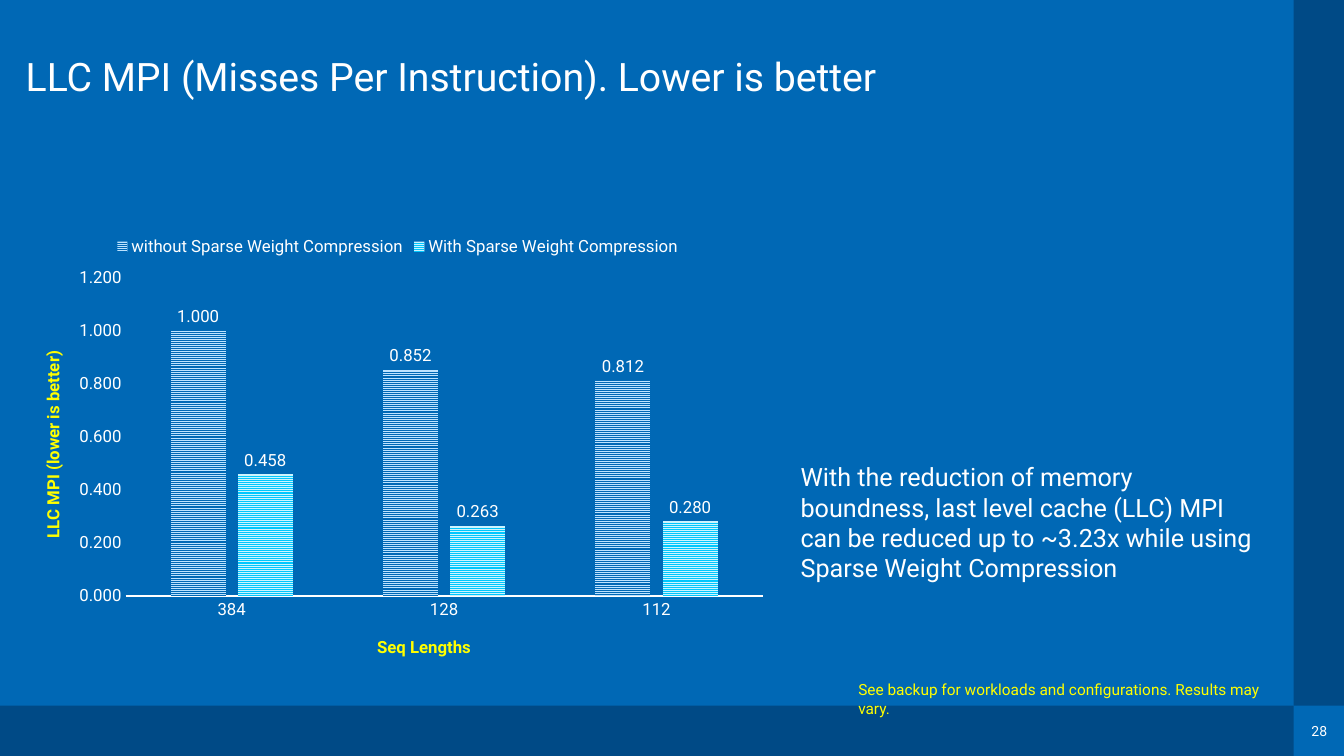
from dataclasses import dataclass

from lxml import etree
from pptx import Presentation
from pptx.chart.data import CategoryChartData
from pptx.dml.color import RGBColor
from pptx.enum.chart import XL_CHART_TYPE, XL_LABEL_POSITION, XL_LEGEND_POSITION, XL_TICK_MARK
from pptx.enum.dml import MSO_PATTERN
from pptx.enum.shapes import MSO_SHAPE
from pptx.enum.text import MSO_ANCHOR, PP_ALIGN
from pptx.oxml.ns import qn
from pptx.util import Pt

COLUMNS = XL_CHART_TYPE.COLUMN_CLUSTERED
OUTSIDE = XL_LABEL_POSITION.OUTSIDE_END
LEGEND_TOP = XL_LEGEND_POSITION.TOP
NO_TICK = XL_TICK_MARK.NONE
STRIPES = MSO_PATTERN.NARROW_HORIZONTAL
RECTANGLE = MSO_SHAPE.RECTANGLE
TOP, MIDDLE = MSO_ANCHOR.TOP, MSO_ANCHOR.MIDDLE
LEFT, CENTER = PP_ALIGN.LEFT, PP_ALIGN.CENTER

EMU_PER_PX = 9525
SLIDE_WIDTH, SLIDE_HEIGHT, BAND = 1280, 720, 48


@dataclass(frozen=True)
class Theme:
    font: str = "Roboto"
    background: str = "0068B5"
    band: str = "004A86"
    text: str = "FFFFFF"
    accent: str = "FFFF00"
    # Foreground and background of each series' stripes
    stripes: tuple = (("0068B5", "BDE3FF"), ("00C7FD", "CCF4FF"))
    title_size: int = 28
    body_size: int = 18
    chart_size: int = 12
    note_size: int = 11
    number_size: int = 10


THEME = Theme()


def px(*lengths):
    return [length * EMU_PER_PX for length in lengths]


def rgb(color):
    return RGBColor.from_string(color)


def style_font(font, size, color=THEME.text, bold=False):
    font.name = THEME.font
    font.size = Pt(size)
    font.bold = bold
    font.color.rgb = rgb(color)


def add_band(slide, *box):
    shape = slide.shapes.add_shape(RECTANGLE, *px(*box))
    shape.shadow.inherit = False
    shape.fill.solid()
    shape.fill.fore_color.rgb = rgb(THEME.band)
    shape.line.fill.background()


def add_text(slide, box, text, size, color=THEME.text, anchor=TOP,
             align=LEFT, spacing=1.0, inset=True, wrap=True):
    text_frame = slide.shapes.add_textbox(*px(*box)).text_frame
    text_frame.word_wrap = wrap
    text_frame.vertical_anchor = anchor
    if not inset:
        text_frame.margin_left = text_frame.margin_right = 0
        text_frame.margin_top = text_frame.margin_bottom = 0
    text_frame.text = text
    paragraph = text_frame.paragraphs[0]
    paragraph.alignment = align
    paragraph.line_spacing = spacing
    style_font(paragraph.runs[0].font, size, color)


def place(element, before, **position):
    """Place a chart part by fractions of the chart, ahead of the named child."""
    for old in element.findall(qn("c:layout")):
        element.remove(old)
    layout = etree.Element(qn("c:layout"))
    manual = etree.SubElement(layout, qn("c:manualLayout"))
    if "h" in position:
        etree.SubElement(manual, qn("c:layoutTarget")).set("val", "inner")
    for axis in ("xMode", "yMode"):
        etree.SubElement(manual, qn("c:" + axis)).set("val", "edge")
    for key, value in position.items():
        etree.SubElement(manual, qn("c:" + key)).set("val", str(value))
    element.find(qn("c:" + before)).addprevious(layout)


def style_axis(axis, title, x, y):
    axis.has_major_gridlines = False
    axis.major_tick_mark = axis.minor_tick_mark = NO_TICK
    style_font(axis.tick_labels.font, THEME.chart_size)
    text_frame = axis.axis_title.text_frame
    text_frame.text = title
    style_font(text_frame.paragraphs[0].runs[0].font, THEME.chart_size, THEME.accent, True)
    place(axis.axis_title._element, "overlay", x=x, y=y)


def style_series(series, foreground, background):
    fill = series.format.fill
    fill.patterned()
    fill.pattern = STRIPES
    fill.fore_color.rgb = rgb(foreground)
    fill.back_color.rgb = rgb(background)
    series.invert_if_negative = False
    labels = series.data_labels
    labels.show_value = True
    labels.position = OUTSIDE
    labels.number_format = "0.000"
    labels.number_format_is_linked = False
    style_font(labels.font, THEME.chart_size)


def add_misses_chart(slide, box):
    data = CategoryChartData(number_format="0.000")
    data.categories = ["384", "128", "112"]
    data.add_series("without Sparse Weight Compression", (1, 0.852, 0.812))
    data.add_series("With Sparse Weight Compression", (0.458, 0.263, 0.280))
    chart = slide.shapes.add_chart(COLUMNS, *px(*box), data).chart
    chart.has_title = False
    style_font(chart.font, THEME.number_size)

    # Columns
    plot = chart.plots[0]
    plot.gap_width, plot.overlap = 164, -22
    plot.vary_by_categories = False
    for series, colors in zip(plot.series, THEME.stripes):
        style_series(series, *colors)
    place(plot._element.getparent(), "barChart", x=0.144, y=0.12, w=0.836, h=0.704)

    # Axes
    style_axis(chart.category_axis, "Seq Lengths", 0.47, 0.905)
    line = chart.category_axis.format.line
    line.color.rgb = rgb(THEME.text)
    line.width = Pt(1.5)
    value_axis = chart.value_axis
    style_axis(value_axis, "LLC MPI (lower is better)", 0.03, 0.275)
    value_axis.minimum_scale, value_axis.maximum_scale = 0, 1.2
    value_axis.major_unit = 0.2
    value_axis.tick_labels.number_format = "0.000"
    value_axis.tick_labels.number_format_is_linked = False
    value_axis.format.line.fill.background()

    # Legend
    chart.has_legend = True
    legend = chart.legend
    legend.position = LEGEND_TOP
    legend.include_in_layout = False
    style_font(legend.font, THEME.chart_size)
    place(legend._element, "overlay", x=0.126, y=0.02)


def main():
    presentation = Presentation()
    presentation.slide_width, presentation.slide_height = px(SLIDE_WIDTH, SLIDE_HEIGHT)
    slide = presentation.slides.add_slide(presentation.slide_layouts[6])
    slide.background.fill.solid()
    slide.background.fill.fore_color.rgb = rgb(THEME.background)

    # Frame and slide number
    inner_width, inner_height = SLIDE_WIDTH - BAND, SLIDE_HEIGHT - BAND
    add_text(slide, (1249, 688, 15, 16), "28", THEME.number_size,
             align=CENTER, inset=False, wrap=False)
    add_band(slide, 0, inner_height, inner_width, BAND)
    add_band(slide, inner_width, 0, BAND, inner_height)

    # Title, message, chart and note
    add_text(slide, (15, 12, 1215, 126), "LLC MPI (Misses Per Instruction). Lower is better",
             THEME.title_size, anchor=MIDDLE, spacing=0.9)
    add_text(slide, (753, 435, 452, 126),
             "With the reduction of memory boundness, last level cache (LLC) MPI can be "
             "reduced up to ~3.23x while using Sparse Weight Compression", THEME.body_size)
    add_misses_chart(slide, (15, 213, 726, 430))
    add_text(slide, (808, 643, 424, 29),
             "See backup for workloads and configurations. Results may vary.",
             THEME.note_size, THEME.accent)
    presentation.save("out.pptx")


if __name__ == "__main__":
    main()
